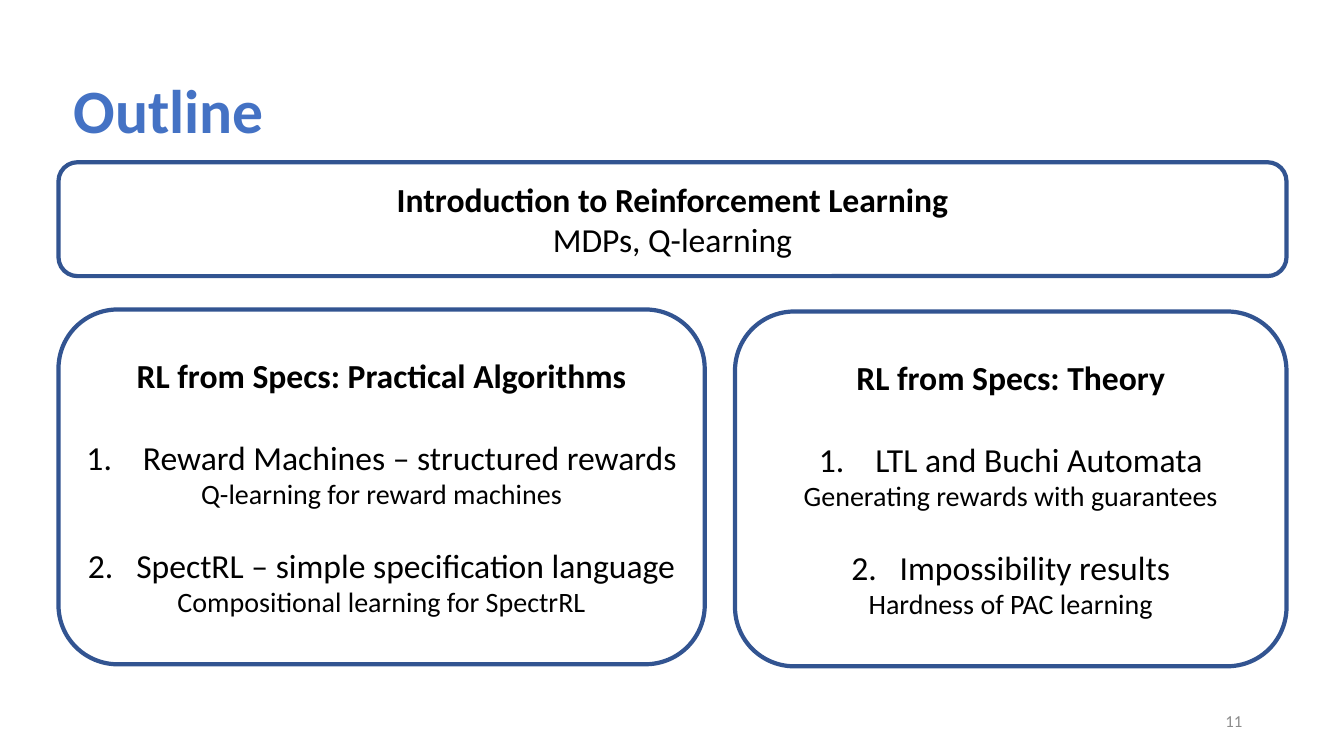
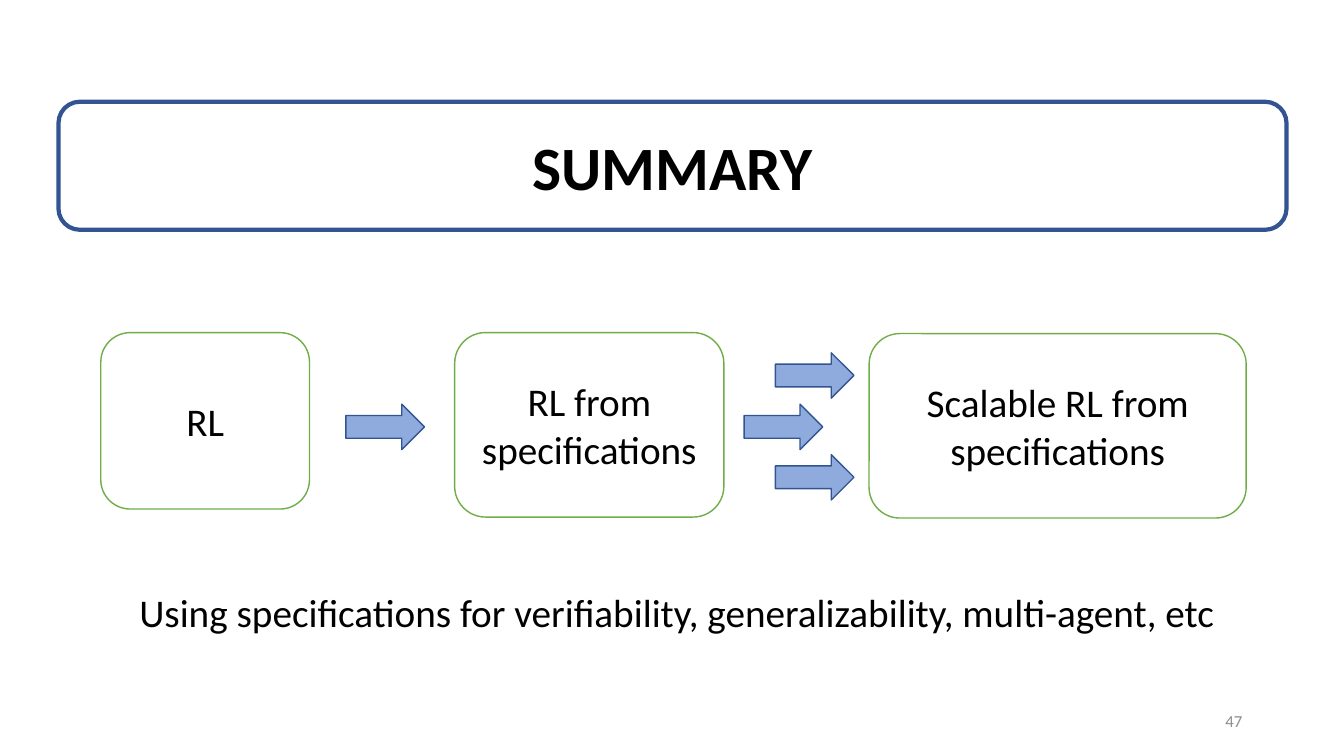
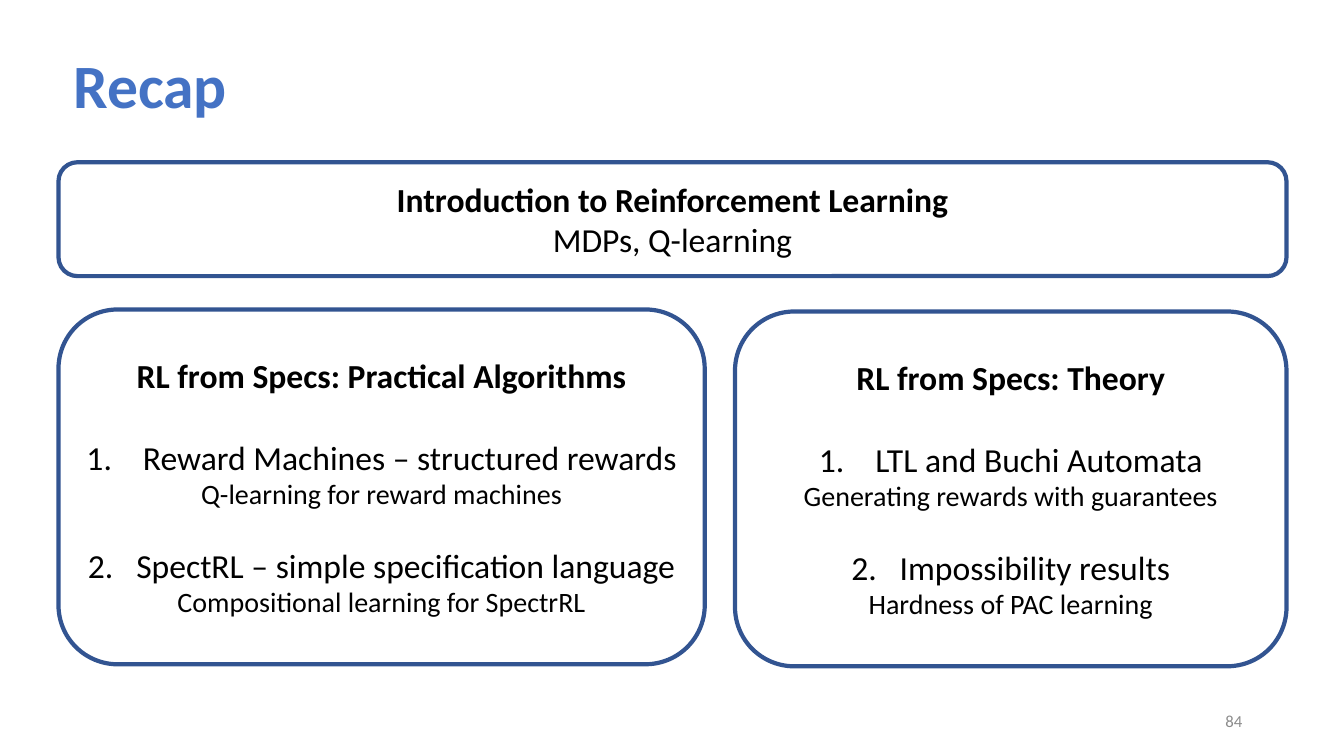
import pptx
import pptx.dml.color
import pptx.enum.shapes
import pptx.enum.text
import pptx.util
import lxml.etree

Inches = pptx.util.Inches
Pt = pptx.util.Pt
RGBColor = pptx.dml.color.RGBColor
ALIGN = pptx.enum.text.PP_ALIGN
ANCHOR = pptx.enum.text.MSO_ANCHOR
SHAPE = pptx.enum.shapes.MSO_SHAPE

BLUE = RGBColor(0x44, 0x72, 0xC4)
NAVY = RGBColor(0x32, 0x54, 0x91)
PALE = RGBColor(0x8F, 0xAA, 0xDC)
GREEN = RGBColor(0x70, 0xAD, 0x47)
GRAY = RGBColor(0x8C, 0x8C, 0x8C)
BLACK = RGBColor(0, 0, 0)
WHITE = RGBColor(0xFF, 0xFF, 0xFF)

FONT = "Calibri"
LEFT = 0.58
WIDTH = 12.18


def style(size, bold=False, color=BLACK, **para):
    return {
        "font": {"name": FONT, "size": Pt(size), "bold": bold},
        "color": color,
        "para": {"alignment": ALIGN.CENTER, **para},
    }


TITLE = style(44, True, BLUE, alignment=ALIGN.LEFT, line_spacing=0.9)
BANNER = style(44, True)
HEAD = style(24, True)
BODY = style(24)
NOTE = style(20)
FIRST = style(24, space_before=Pt(29.3))
NEXT = style(24, space_before=Pt(24.4))
LARGE = style(28)
NUMBER = style(12, color=GRAY, alignment=ALIGN.RIGHT)

INTRO = [("Introduction to Reinforcement Learning", HEAD), ("MDPs, Q-learning", BODY)]
TOPICS = [
    (
        (LEFT, 3.07, 6.41, 3.52),
        "RL from Specs: Practical Algorithms",
        ("Reward Machines – structured rewards", "Q-learning for reward machines"),
        ("SpectRL – simple specification language", "Compositional learning for SpectrRL"),
    ),
    (
        (7.29, 3.09, 5.47, 3.52),
        "RL from Specs: Theory",
        ("LTL and Buchi Automata", "Generating rewards with guarantees"),
        ("Impossibility results", "Hardness of PAC learning"),
    ),
]
STAGES = [
    ((1, 3.3, 2.07, 1.75), "RL"),
    ((4.51, 3.3, 2.67, 1.83), "RL from specifications"),
    ((8.62, 3.31, 3.74, 1.83), "Scalable RL from specifications"),
]
ARROWS = [(3.43, 4.01), (7.38, 4.01), (7.69, 3.5), (7.69, 4.51)]


def apply(target, values):
    for name, value in values.items():
        setattr(target, name, value)


def write(shape, lines, anchor=ANCHOR.MIDDLE):
    frame = shape.text_frame
    apply(frame, {"word_wrap": True, "vertical_anchor": anchor})
    for index, (text, look) in enumerate(lines):
        para = frame.paragraphs[0] if index == 0 else frame.add_paragraph()
        apply(para, look["para"])
        run = para.add_run()
        run.text = text
        apply(run.font, look["font"])
        run.font.color.rgb = look["color"]


def number(para, start, indent):
    props = para._p.get_or_add_pPr()
    props.set("marL", str(Inches(indent)))
    props.set("indent", str(-Inches(indent)))
    mark = lxml.etree.SubElement(props, pptx.oxml.ns.qn("a:buAutoNum"))
    mark.set("type", "arabicPeriod")
    mark.set("startAt", str(start))


def add_text(slide, area, text, look, anchor=ANCHOR.MIDDLE):
    box = slide.shapes.add_textbox(*map(Inches, area))
    write(box, [(text, look)], anchor)


def add_form(slide, kind, area, line, weight, fill=None):
    form = slide.shapes.add_shape(kind, *map(Inches, area))
    form.shadow.inherit = False
    form.line.color.rgb = line
    form.line.width = Pt(weight)
    if fill is None:
        form.fill.background()
    else:
        form.fill.solid()
        form.fill.fore_color.rgb = fill
    return form


def add_panel(slide, area, lines):
    panel = add_form(slide, SHAPE.ROUNDED_RECTANGLE, area, NAVY, 3)
    write(panel, lines)
    return panel


def add_topic(slide, area, head, first, second):
    lines = [(head, HEAD), (first[0], FIRST), (first[1], NOTE),
             (second[0], NEXT), (second[1], NOTE)]
    paras = add_panel(slide, area, lines).text_frame.paragraphs
    number(paras[1], 1, 0.56)
    number(paras[3], 2, 0.48)


def add_page(deck, page):
    slide = deck.slides.add_slide(deck.slide_layouts[6])
    add_text(slide, (9.42, 6.95, 3, 0.4), page, NUMBER)
    return slide


def add_outline(deck, title, top, page):
    slide = add_page(deck, page)
    add_text(slide, (0.63, top, 11.5, 1.45), title, TITLE)
    add_panel(slide, (LEFT, 1.61, WIDTH, 1.13), INTRO)
    for topic in TOPICS:
        add_topic(slide, *topic)


def add_summary(deck, page):
    slide = add_page(deck, page)
    add_panel(slide, (LEFT, 1.01, WIDTH, 1.27), [("SUMMARY", BANNER)])
    for area, text in STAGES:
        stage = add_form(slide, SHAPE.ROUNDED_RECTANGLE, area, GREEN, 1, WHITE)
        write(stage, [(text, LARGE)])
    for left, top in ARROWS:
        add_form(slide, SHAPE.RIGHT_ARROW, (left, top, 0.78, 0.45), NAVY, 1, PALE)
    add_text(
        slide,
        (1, 5.79, 11.42, 0.57),
        "Using specifications for verifiability, generalizability, multi-agent, etc",
        LARGE,
        ANCHOR.TOP,
    )


def main():
    deck = pptx.Presentation()
    apply(deck, {"slide_width": Inches(13.33), "slide_height": Inches(7.5)})
    add_outline(deck, "Outline", 0.4, "11")
    add_summary(deck, "47")
    add_outline(deck, "Recap", 0.15, "84")
    deck.save("out.pptx")


if __name__ == "__main__":
    main()
